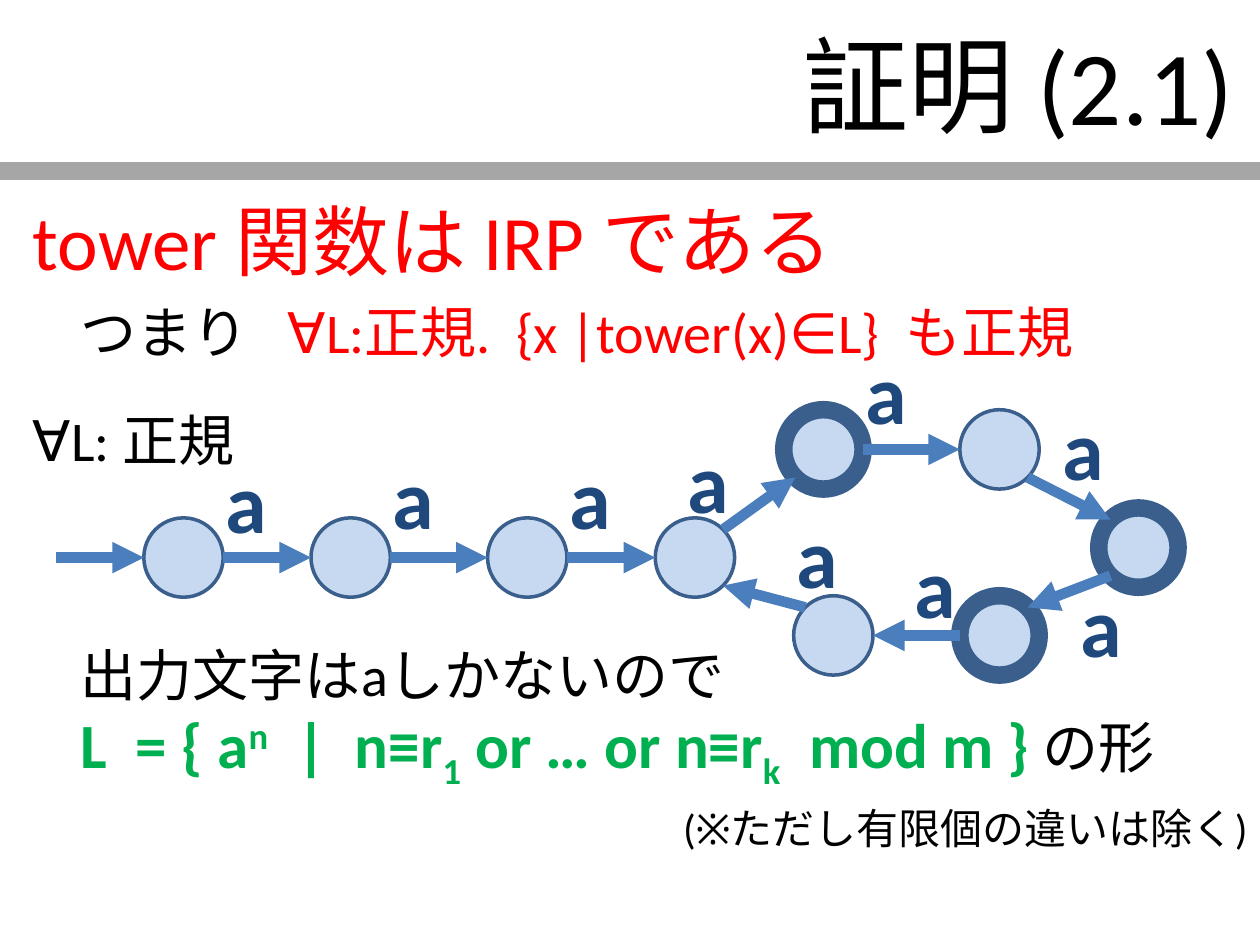
from math import cos, radians, sin

from lxml.etree import SubElement
from pptx import Presentation
from pptx.dml.color import RGBColor
from pptx.enum.shapes import MSO_CONNECTOR, MSO_SHAPE
from pptx.enum.text import MSO_ANCHOR, PP_ALIGN
from pptx.oxml.ns import qn
from pptx.util import Cm, Pt

WIDE, HIGH = 25.4, 19.05
RAD = 0.8
BLACK, RED, GREEN, NAVY = "000000", "FF0000", "00B050", "1F497D"
LEFT, RIGHT = PP_ALIGN.LEFT, PP_ALIGN.RIGHT

# Centre of each state, and whether it accepts
ROW = 11.24
STATES = [
    (3.7, ROW, False), (7.07, ROW, False), (10.63, ROW, False),
    (14.01, ROW, False), (16.6, 9.06, True), (20.15, 9.06, False),
    (22.95, 11.04, True), (20.15, 12.81, True), (16.8, 12.81, False),
]

# From state, angle there, to state, angle there, left and top of label
# Angles run clockwise from the right
EDGES = [
    (0, 0, 1, 180, 4.29, 8.92),
    (1, 0, 2, 180, 7.67, 8.84),
    (2, 0, 3, 180, 11.23, 8.84),
    (3, -45, 4, 135, 13.61, 8.53),
    (4, 0, 5, 180, 17.2, 6.73),
    (5, 45, 6, 225, 21.16, 7.85),
    (6, 135, 7, -45, 21.54, 11.43),
    (7, 180, 8, 0, 18.19, 10.64),
    (8, 225, 3, 45, 15.8, 10.03),
]


def color(code):
    return RGBColor.from_string(code)


def add_run(para, text, size, tint=BLACK, bold=False, shift=0):
    run = para.add_run()
    run.text = text
    font = run.font
    font.name, font.size, font.bold = "Calibri", Pt(size), bold
    font.color.rgb = color(tint)
    if shift:
        run._r.get_or_add_rPr().set("baseline", str(shift * 1000))


def add_text(slide, box, runs, align=LEFT, inset=0):
    frame = slide.shapes.add_textbox(*map(Cm, box)).text_frame
    frame.word_wrap = True
    frame.vertical_anchor = MSO_ANCHOR.MIDDLE
    frame.margin_left = frame.margin_right = Cm(inset)
    frame.margin_top = frame.margin_bottom = 0
    para = frame.paragraphs[0]
    para.alignment = align
    for run in runs:
        add_run(para, *run)


def add_row(slide, left, mid, runs, align=LEFT):
    tall = 2
    add_text(slide, (left, mid - tall / 2, 25.15 - left, tall), runs, align)


def add_line(slide, start, end, tint, width, arrow=False):
    ends = map(Cm, (*start, *end))
    line = slide.shapes.add_connector(MSO_CONNECTOR.STRAIGHT, *ends)
    line.line.color.rgb = color(tint)
    line.line.width = Pt(width)
    if arrow:
        SubElement(line.line._get_or_add_ln(), qn("a:tailEnd"), type="triangle")
    SubElement(line._element.spPr, qn("a:effectLst"))


def add_state(slide, x, y, final):
    box = map(Cm, (x - RAD, y - RAD, 2 * RAD, 2 * RAD))
    dot = slide.shapes.add_shape(MSO_SHAPE.OVAL, *box)
    dot.shadow.inherit = False
    dot.fill.solid()
    dot.fill.fore_color.rgb = color("C6D9F1")
    dot.line.color.rgb = color("3A5F8C")
    dot.line.width = Pt(10 if final else 2)


def rim(state, angle):
    x, y, _ = STATES[state]
    turn = radians(angle)
    return x + RAD * cos(turn), y + RAD * sin(turn)


def add_graph(slide):
    for state in STATES:
        add_state(slide, *state)
    # Entry arrow, then one arrow per edge
    start = rim(0, 180)
    add_line(slide, (1.12, ROW), start, "4B7EBC", 6, True)
    for tail, out, head, into, *_ in EDGES:
        add_line(slide, rim(tail, out), rim(head, into), "4B7EBC", 6, True)
    for *_, left, top in EDGES:
        add_text(slide, (left, top, 1.6, 2.31), [("a", 48, NAVY, True)],
                 inset=0.25)


def add_body(slide):
    edge, step = 0.66, 1.63
    add_row(slide, edge, 4.83, [("tower 関数は IRP である", 44, RED)])
    add_row(slide, step, 6.68, [("つまり", 32)])
    add_row(slide, 5.8, 6.68,
            [("∀L:正規.  {x |tower(x)∈L}  も正規", 32, RED)])
    add_row(slide, edge, 8.86, [("∀L: 正規", 32)])
    add_row(slide, step, 13.59, [("出力文字はaしかないので", 32)])
    parts = [("L  = { a", 0), ("n", 30), ("  |  n≡r", 0), ("1", -25),
             (" or … or n≡r", 0), ("k", -25), ("  mod m }", 0)]
    rule = [(text, 36, GREEN, True, shift) for text, shift in parts]
    add_row(slide, step, 15.09, rule + [(" の形", 32)])
    add_row(slide, step, 16.69, [("(※ただし有限個の違いは除く)", 24)], RIGHT)


def main():
    deck = Presentation()
    deck.slide_width, deck.slide_height = Cm(WIDE), Cm(HIGH)
    slide = deck.slides.add_slide(deck.slide_layouts[6])
    # Title and rule below it
    add_line(slide, (0, 3.45), (WIDE, 3.45), "A6A6A6", 10)
    add_text(slide, (2.26, 0.1, 22.86, 3.18), [("証明 (2.1)", 60)],
             RIGHT, 0.25)
    # Text, then the automaton
    add_body(slide)
    add_graph(slide)
    deck.save("out.pptx")


if __name__ == "__main__":
    main()
